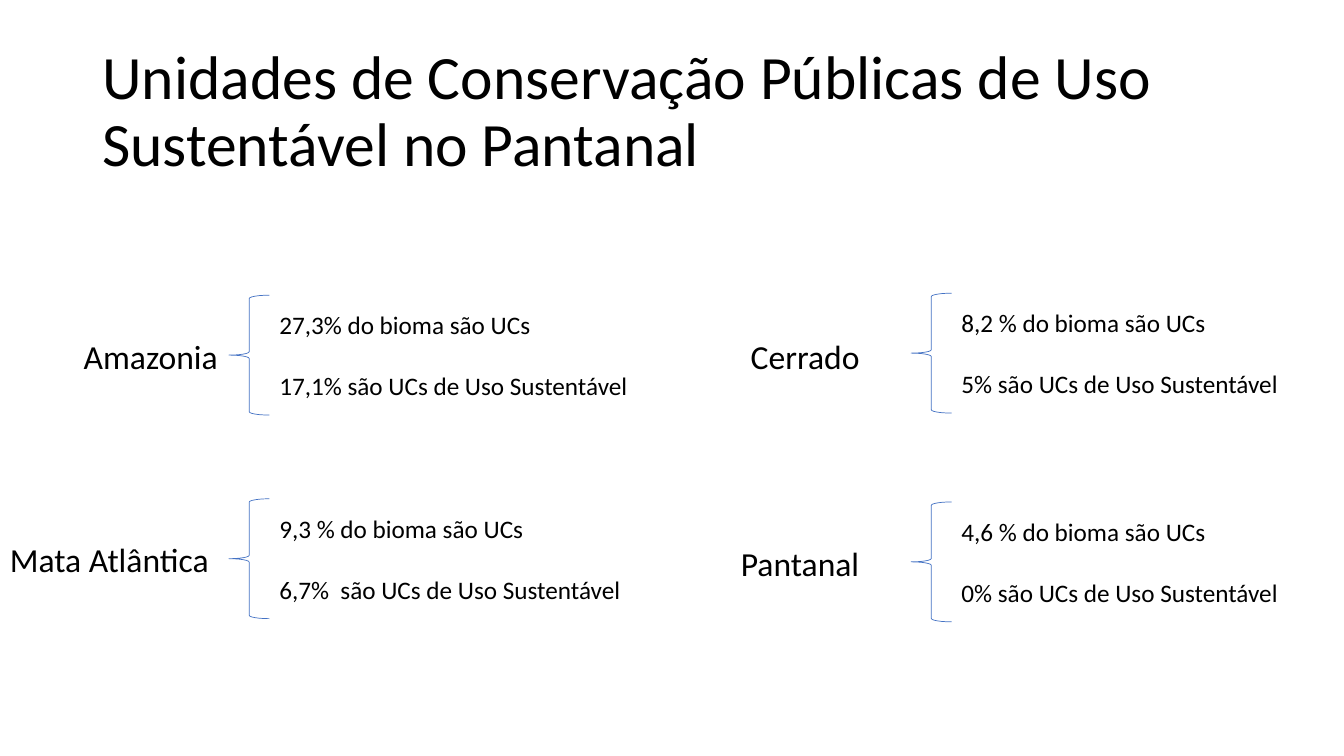
from collections import namedtuple

from pptx import Presentation
from pptx.dml.color import RGBColor
from pptx.enum.shapes import MSO_SHAPE
from pptx.enum.text import MSO_ANCHOR as Anchor, MSO_AUTO_SIZE as AutoSize, PP_ALIGN as Align
from pptx.util import Cm, Pt

COLORS = {"text": "000000", "brace": "4472C4"}
FONT = "Calibri"
BRACE_WIDTH, BRACE_HEIGHT = 1.02, 3.02
LABEL_HEIGHT, FACTS_HEIGHT = 1.28, 2.56

Box = namedtuple("Box", "left top width height")
Biome = namedtuple("Biome", "name label_left label_width label_top brace_left brace_top facts_width facts")

BIOMES = [
    Biome("Amazonia", 1.86, 3.91, 8.33, 5.77, 7.44, 9.37,
          ["27,3% do bioma são UCs", "17,1% são UCs de Uso Sustentável"]),
    Biome("Mata Atlântica", 0, 5.56, 13.45, 5.77, 12.57, 9.2,
          ["9,3 % do bioma são UCs", "6,7%  são UCs de Uso Sustentável"]),
    Biome("Cerrado", 18.67, 3.28, 8.33, 22.96, 7.39, 8.59,
          ["8,2 % do bioma são UCs", "5% são UCs de Uso Sustentável"]),
    Biome("Pantanal", 18.42, 3.53, 13.55, 22.96, 12.65, 8.59,
          ["4,6 % do bioma são UCs", "0% são UCs de Uso Sustentável"]),
]


def add_text(slide, box, lines, size, wrap=False, gap=0):
    shape = slide.shapes.add_textbox(*(Cm(length) for length in box))
    frame = shape.text_frame
    frame.word_wrap = wrap
    frame.auto_size = AutoSize.NONE if wrap else AutoSize.SHAPE_TO_FIT_TEXT
    for index, line in enumerate(lines):
        paragraph = frame.add_paragraph() if index else frame.paragraphs[0]
        paragraph.alignment = Align.LEFT
        if index:
            paragraph.space_before = Pt(gap)
        run = paragraph.add_run()
        run.text = line
        run.font.name = FONT
        run.font.size = Pt(size)
        run.font.color.rgb = RGBColor.from_string(COLORS["text"])
    return frame


def add_title(slide, box, title):
    frame = add_text(slide, box, [title], 44, wrap=True)
    frame.vertical_anchor = Anchor.MIDDLE
    frame.paragraphs[0].line_spacing = 0.9


def add_brace(slide, box):
    brace = slide.shapes.add_shape(MSO_SHAPE.LEFT_BRACE, *(Cm(length) for length in box))
    brace.shadow.inherit = False
    brace.fill.background()
    brace.line.color.rgb = RGBColor.from_string(COLORS["brace"])
    brace.line.width = Pt(0.5)


def add_biome(slide, biome):
    brace = Box(biome.brace_left, biome.brace_top, BRACE_WIDTH, BRACE_HEIGHT)
    facts = Box(brace.left + brace.width, brace.top + (brace.height - FACTS_HEIGHT) / 2,
                biome.facts_width, FACTS_HEIGHT)
    label = Box(biome.label_left, biome.label_top, biome.label_width, LABEL_HEIGHT)
    add_text(slide, label, [biome.name], 24)
    add_brace(slide, brace)
    add_text(slide, facts, biome.facts, 18, gap=22)


def main():
    presentation = Presentation()
    presentation.slide_width, presentation.slide_height = Cm(33.87), Cm(19.05)
    slide = presentation.slides.add_slide(presentation.slide_layouts[6])
    add_title(slide, Box(2.33, 1.01, 29.21, 3.68),
              "Unidades de Conservação Públicas de Uso Sustentável no Pantanal")
    for biome in BIOMES:
        add_biome(slide, biome)
    presentation.save("out.pptx")


if __name__ == "__main__":
    main()
